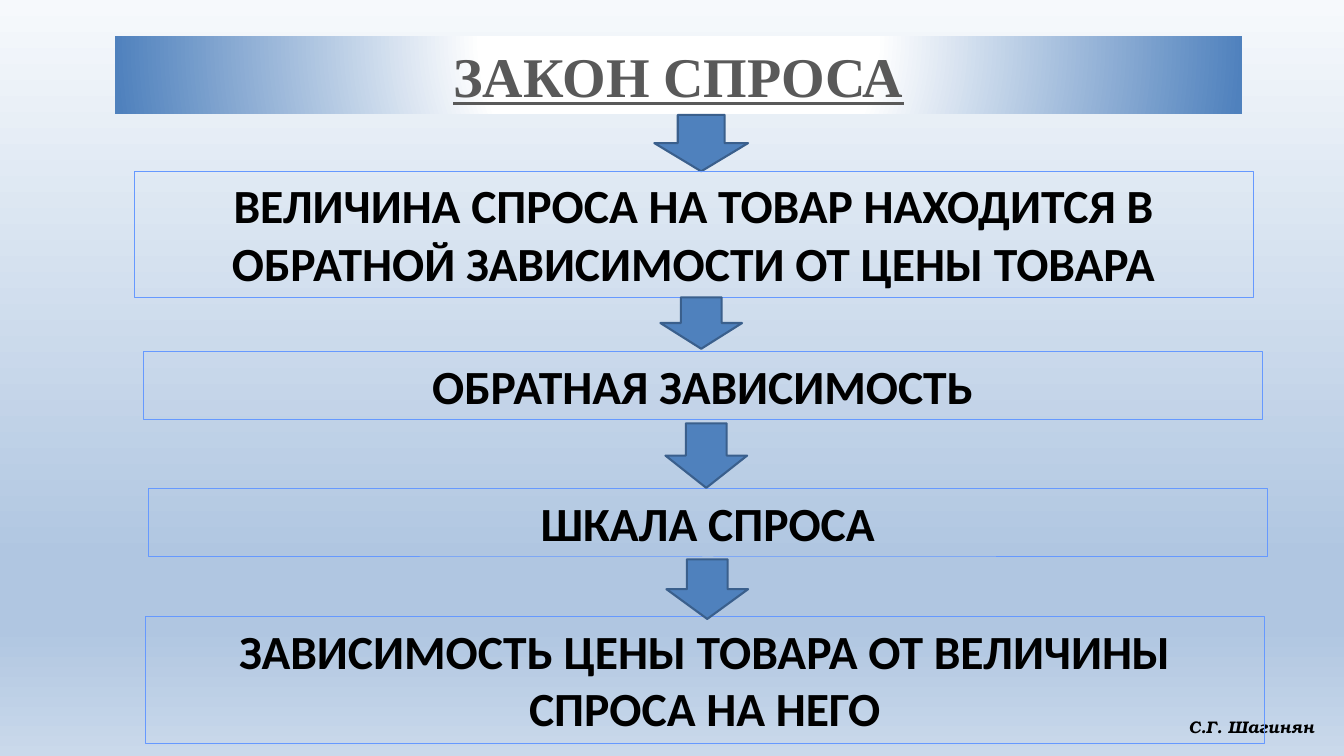
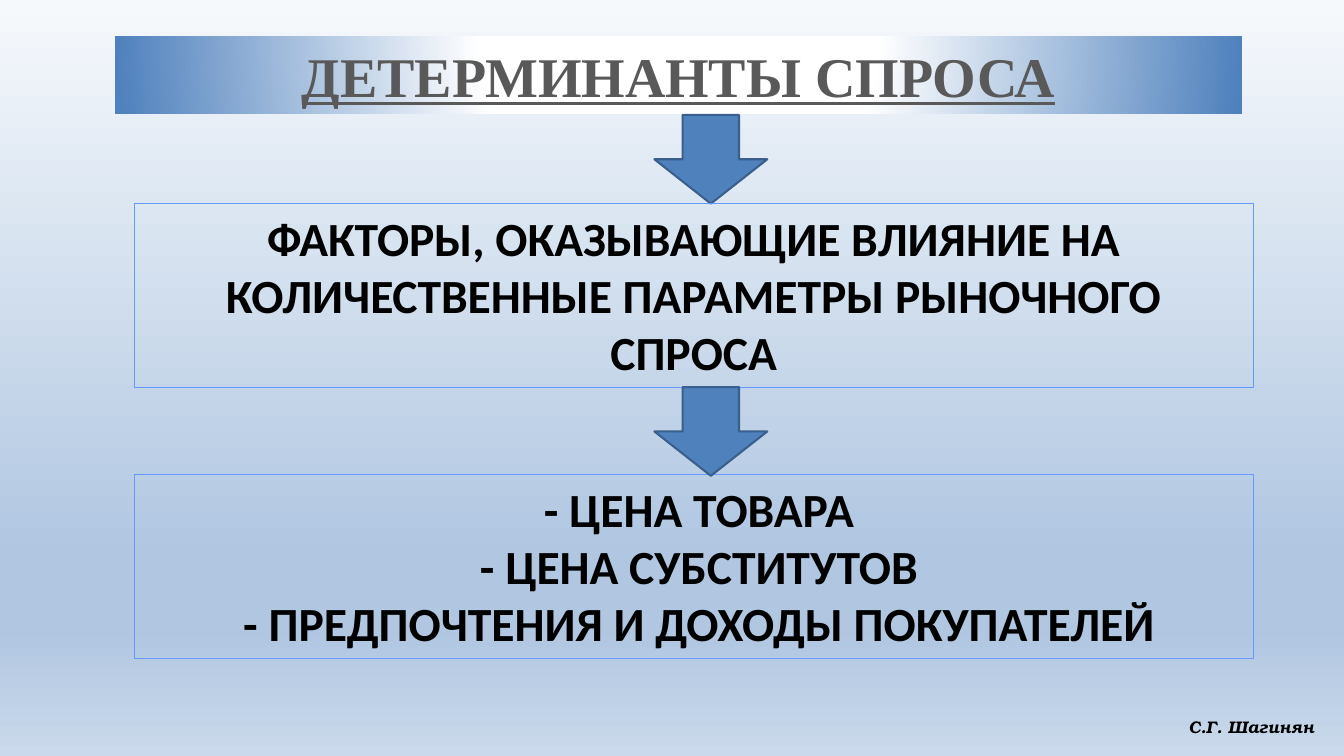
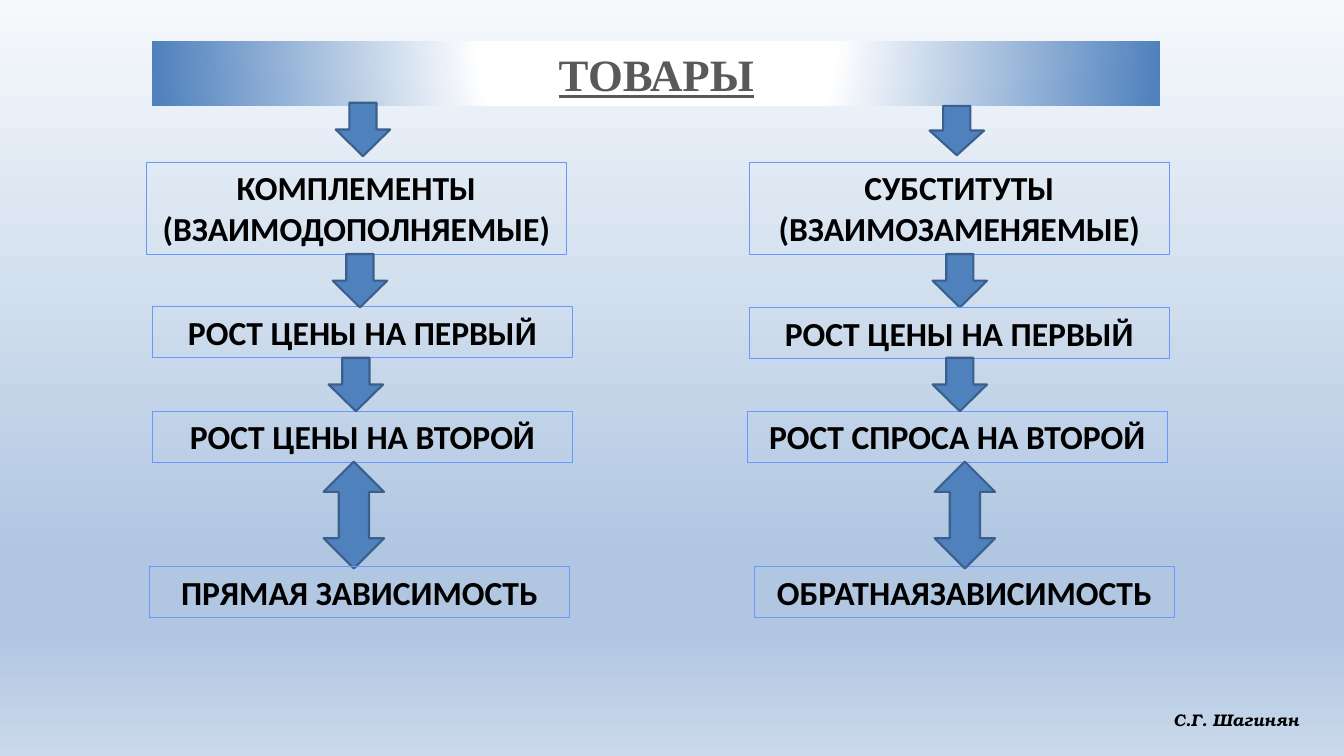
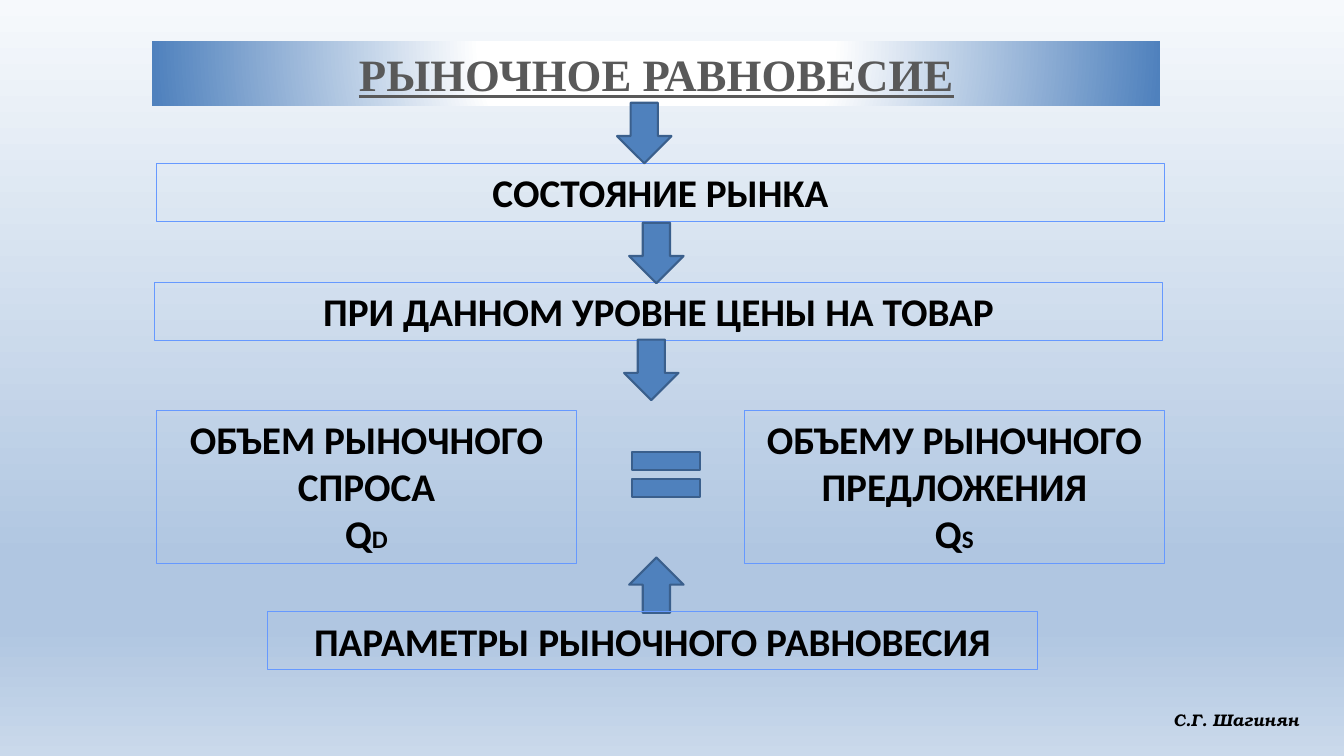
from collections import namedtuple

from pptx import Presentation
from pptx.dml.color import RGBColor
from pptx.enum.shapes import MSO_SHAPE as SHAPE
from pptx.enum.text import MSO_ANCHOR as ANCHOR, MSO_AUTO_SIZE as FIT, PP_ALIGN as ALIGN
from pptx.oxml import parse_xml
from pptx.oxml.ns import nsdecls, qn
from pptx.util import Inches, Pt

COLORS = {
    "sky": "F6F9FC", "haze": "B0C6E1", "ground": "CAD9EB",
    "white": "FFFFFF", "blue": "4F81BD", "arrow_line": "3A5F8C",
    "box_line": "6699FF", "title": "595959", "text": "000000",
}
FONTS = {"title": "Times New Roman", "body": "Calibri", "author": "TeX Gyre Bonum"}
AUTHOR = "С.Г. Шагинян"

BACKGROUND = ([(0, "sky"), (74, "haze"), (83, "haze"), (100, "ground")],
              '<a:lin ang="5400000" scaled="0"/>')
BAND = ([(0, "white"), (35, "white"), (100, "blue")],
        '<a:path path="circle"><a:fillToRect l="50000" t="-80000" r="50000" b="180000"/></a:path>')

# Lengths are inches; a box gets its height from its number of text lines.
Frame = namedtuple("Frame", "band title_size author")
Box = namedtuple("Box", "x y w lines paragraphs")
Sign = namedtuple("Sign", "x y w h kind", defaults=[SHAPE.DOWN_ARROW])

LARGE = Frame((1.14, 0.36, 11.18, 0.77), 40, (11.69, 7.06, 1.44, 0.3))
SMALL = Frame((1.51, 0.41, 10, 0.64), 32, (11.54, 6.99, 1.45, 0.3))
WIDE, HALF = 11.1, 4.17
LINE_RATIO, INSETS = 1.22, 0.1

# Frame, title, text size, parts from back to front
SLIDES = [
    (LARGE, "ЗАКОН СПРОСА", 34, [
        Sign(6.49, 1.14, 0.93, 0.56),
        Box(1.33, 1.7, WIDE, 2,
            ["ВЕЛИЧИНА СПРОСА НА ТОВАР НАХОДИТСЯ В ОБРАТНОЙ ЗАВИСИМОСТИ ОТ ЦЕНЫ ТОВАРА"]),
        Box(1.42, 3.49, WIDE, 1, ["ОБРАТНАЯ ЗАВИСИМОСТЬ"]),
        Box(1.47, 4.85, WIDE, 1, ["ШКАЛА СПРОСА"]),
        Sign(6.55, 2.95, 0.81, 0.51),
        Box(1.44, 6.12, WIDE, 2, ["ЗАВИСИМОСТЬ ЦЕНЫ ТОВАРА ОТ ВЕЛИЧИНЫ СПРОСА НА НЕГО"]),
        Sign(6.6, 4.2, 0.81, 0.64),
        Sign(6.61, 5.55, 0.81, 0.59),
    ]),
    (LARGE, "ДЕТЕРМИНАНТЫ СПРОСА", 34, [
        Sign(6.49, 1.14, 1.12, 0.88),
        Box(1.33, 2.02, WIDE, 3,
            ["ФАКТОРЫ, ОКАЗЫВАЮЩИЕ ВЛИЯНИЕ НА КОЛИЧЕСТВЕННЫЕ ПАРАМЕТРЫ РЫНОЧНОГО СПРОСА"]),
        Box(1.33, 4.71, WIDE, 3,
            [" - ЦЕНА ТОВАРА", " - ЦЕНА СУБСТИТУТОВ", " - ПРЕДПОЧТЕНИЯ И ДОХОДЫ ПОКУПАТЕЛЕЙ"]),
        Sign(6.49, 3.84, 1.12, 0.88),
    ]),
    (SMALL, "ТОВАРЫ", 24, [
        Box(1.45, 1.61, HALF, 2, ["КОМПЛЕМЕНТЫ (ВЗАИМОДОПОЛНЯЕМЫЕ)"]),
        Sign(3.33, 1.02, 0.54, 0.53),
        Sign(9.22, 1.05, 0.54, 0.49),
        Box(7.43, 1.61, HALF, 2, ["СУБСТИТУТЫ (ВЗАИМОЗАМЕНЯЕМЫЕ)"]),
        Box(1.51, 3.04, HALF, 1, ["РОСТ ЦЕНЫ НА ПЕРВЫЙ"]),
        Box(1.51, 4.08, HALF, 1, ["РОСТ ЦЕНЫ НА ВТОРОЙ"]),
        Sign(3.3, 2.52, 0.54, 0.53),
        Sign(3.26, 3.55, 0.54, 0.53),
        Sign(9.25, 2.52, 0.54, 0.53),
        Sign(3.21, 4.58, 0.6, 1.06, SHAPE.UP_DOWN_ARROW),
        Box(7.48, 5.62, HALF, 1, ["ОБРАТНАЯЗАВИСИМОСТЬ"]),
        Box(7.43, 3.05, HALF, 1, ["РОСТ ЦЕНЫ НА ПЕРВЫЙ"]),
        Box(7.41, 4.08, HALF, 1, ["РОСТ СПРОСА НА ВТОРОЙ"]),
        Sign(9.25, 3.55, 0.54, 0.53),
        Sign(9.27, 4.58, 0.6, 1.06, SHAPE.UP_DOWN_ARROW),
        Box(1.48, 5.62, HALF, 1, ["ПРЯМАЯ ЗАВИСИМОСТЬ"]),
    ]),
    (SMALL, "РЫНОЧНОЕ РАВНОВЕСИЕ", 28, [
        Sign(6.24, 5.53, 0.54, 0.55, SHAPE.UP_ARROW),
        Box(1.55, 4.07, HALF, 3, ["ОБЪЕМ РЫНОЧНОГО СПРОСА", ("Q", "D")]),
        Box(1.55, 1.62, 10, 1, ["СОСТОЯНИЕ РЫНКА"]),
        Sign(6.12, 1.02, 0.54, 0.6),
        Box(1.53, 2.8, 10, 1, ["ПРИ ДАННОМ УРОВНЕ ЦЕНЫ НА ТОВАР"]),
        Box(2.65, 6.07, 7.64, 1, ["ПАРАМЕТРЫ РЫНОЧНОГО РАВНОВЕСИЯ"]),
        Sign(6.24, 2.21, 0.54, 0.6),
        Sign(6.19, 3.37, 0.54, 0.6),
        Box(7.38, 4.07, HALF, 3, ["ОБЪЕМУ РЫНОЧНОГО ПРЕДЛОЖЕНИЯ", ("Q", "S")]),
        Sign(6.15, 4.33, 0.91, 0.76, SHAPE.MATH_EQUAL),
    ]),
]


def rgb(name):
    return RGBColor.from_string(COLORS[name])


def inches(lengths):
    return [Inches(n) for n in lengths]


def set_gradient(fill, root, stops, direction):
    """Give the fill, the first one inside root, any number of gradient stops."""
    fill.solid()
    solid = next(root.iter(qn("a:solidFill")))
    stops_xml = "".join(
        f'<a:gs pos="{pos * 1000}"><a:srgbClr val="{COLORS[name]}"/></a:gs>'
        for pos, name in stops)
    gradient = parse_xml(f'<a:gradFill {nsdecls("a")} rotWithShape="1">'
                         f'<a:gsLst>{stops_xml}</a:gsLst>{direction}</a:gradFill>')
    solid.getparent().replace(solid, gradient)


def write(sp, paragraphs, size, font="body", color="text", align=ALIGN.CENTER,
          anchor=ANCHOR.TOP, wrap=True, italic=False, underline=False, small=18):
    """Fill a shape with bold text; a tuple paragraph ends in a smaller index."""
    tf = sp.text_frame
    tf.word_wrap, tf.auto_size, tf.vertical_anchor = wrap, FIT.NONE, anchor
    for i, paragraph in enumerate(paragraphs):
        p = tf.add_paragraph() if i else tf.paragraphs[0]
        p.alignment = align
        runs = (paragraph,) if isinstance(paragraph, str) else paragraph
        for text, points in zip(runs, (size, small)):
            r = p.add_run()
            r.text = text
            f = r.font
            f.name, f.size, f.bold = FONTS[font], Pt(points), True
            f.italic, f.underline = italic, underline
            f.color.rgb = rgb(color)


def add_shape(slide, kind, at, line, width, fill=None):
    sp = slide.shapes.add_shape(kind, *inches(at))
    sp.shadow.inherit = False
    if fill:
        sp.fill.solid()
        sp.fill.fore_color.rgb = rgb(fill)
    else:
        sp.fill.background()
    sp.line.color.rgb = rgb(line)
    sp.line.width = Pt(width)
    return sp


def add_part(slide, part, size):
    if isinstance(part, Sign):
        add_shape(slide, part.kind, part[:4], "arrow_line", 1.5, "blue")
    else:
        height = INSETS + part.lines * size * LINE_RATIO / 72
        sp = add_shape(slide, SHAPE.RECTANGLE, (*part[:3], height), "box_line", 0.75)
        write(sp, part.paragraphs, size)


def add_slide(prs, frame, title, size, parts):
    slide = prs.slides.add_slide(prs.slide_layouts[5])
    band = slide.shapes.title
    band.left, band.top, band.width, band.height = inches(frame.band)
    set_gradient(band.fill, band.element, *BAND)
    write(band, [title], frame.title_size, font="title", color="title",
          anchor=ANCHOR.MIDDLE, underline=True)
    author = slide.shapes.add_textbox(*inches(frame.author))
    write(author, [AUTHOR], 12, font="author", align=ALIGN.LEFT, wrap=False, italic=True)
    for part in parts:
        add_part(slide, part, size)


def main():
    prs = Presentation()
    prs.slide_width, prs.slide_height = inches((13.33, 7.5))
    master = prs.slide_master
    set_gradient(master.background.fill, master.element, *BACKGROUND)
    for content in SLIDES:
        add_slide(prs, *content)
    prs.save("out.pptx")


if __name__ == "__main__":
    main()
